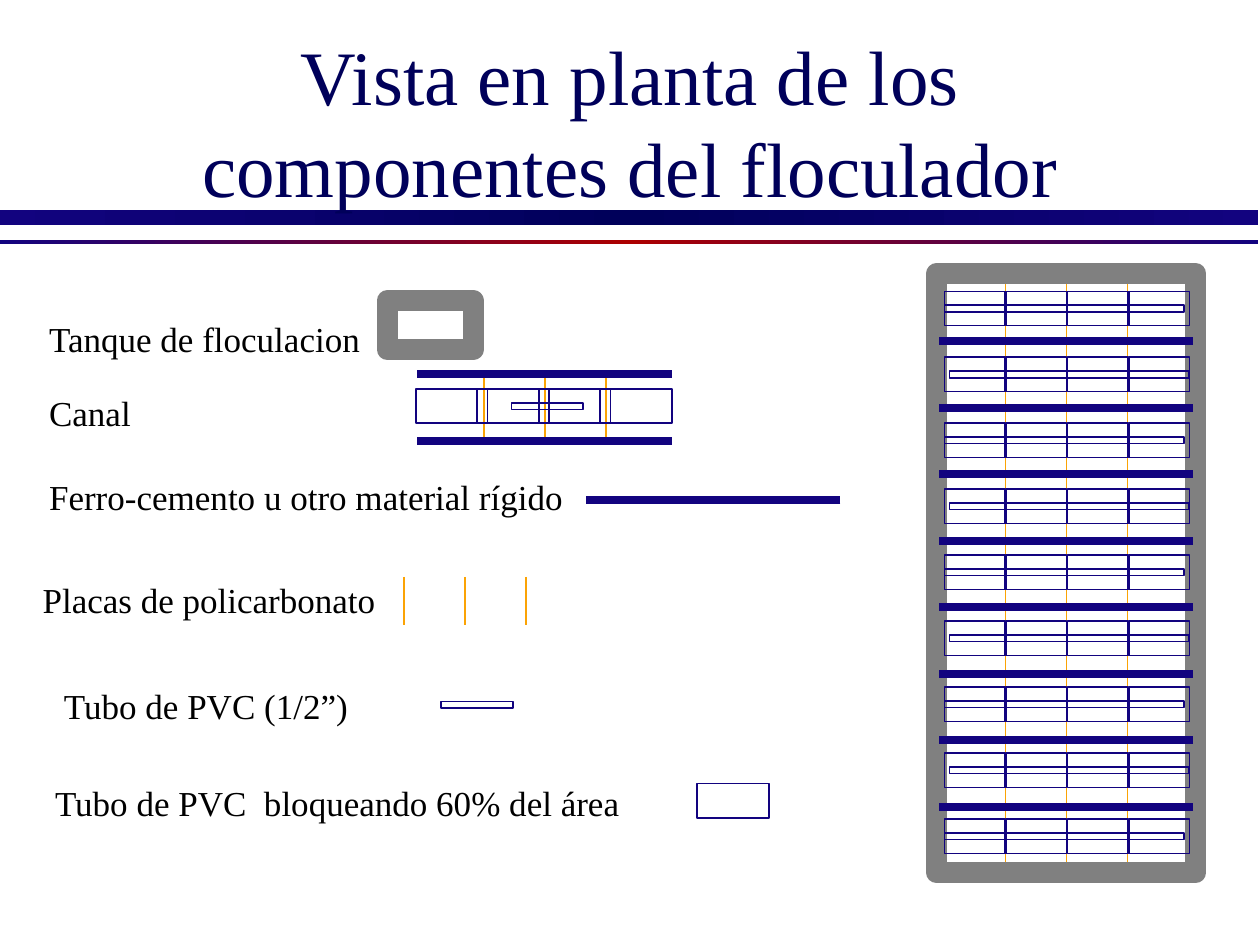
from copy import deepcopy

from pptx import Presentation
from pptx.dml.color import RGBColor
from pptx.enum.shapes import MSO_CONNECTOR, MSO_SHAPE
from pptx.enum.text import MSO_ANCHOR, PP_ALIGN
from pptx.oxml.ns import qn
from pptx.oxml.xmlchemy import OxmlElement
from pptx.util import Cm, Pt

FONT = "Times New Roman"
NAVY, DARK, RED = "12037F", "00005A", "AC0000"
ORANGE, GRAY, BLACK = "FBA305", "808080", "000000"

WALL_LENGTH = 5.13
PLATE_STEP = 1.23
BLOCK_STEP = 1.24
BLOCK_HEIGHT, TUBE_HEIGHT = 0.69, 0.13
SHORT_PIPE = 1.45

# text, left, top, width, wraps
LABELS = [
    ("Tanque de floculacion", 0.74, 6.27, 6.83, False),
    ("Canal", 0.74, 7.77, 2.18, False),
    ("Ferro-cemento u otro material rígido", 0.74, 9.47, 11.58, True),
    ("Placas de policarbonato", 0.61, 11.53, 10.82, True),
    ("Tubo de PVC (1/2”)", 1.04, 13.67, 6.27, False),
    ("Tubo de PVC  bloqueando 60% del área", 0.86, 15.62, 11.99, False),
]


def rgb(color):
    return RGBColor.from_string(color)


def add_text(shapes, text, x, y, w, h, size, color, wrap=True):
    tf = shapes.add_textbox(Cm(x), Cm(y), Cm(w), Cm(h)).text_frame
    tf.word_wrap = wrap
    p = tf.paragraphs[0]
    p.text = text
    p.font.name, p.font.size = FONT, Pt(size)
    p.font.color.rgb = rgb(color)
    return tf


def add_band(shapes, y, h, middle):
    """Full-width bar fading from navy to the middle colour and back."""
    sp = shapes.add_shape(MSO_SHAPE.RECTANGLE, 0, Cm(y), Cm(25.37), Cm(h))
    sp.shadow.inherit = False
    sp.line.fill.background()
    sp.fill.gradient()
    sp.fill.gradient_angle = 0
    for stop, color, position in zip(sp.fill.gradient_stops, (NAVY, middle), (0, 0.5)):
        stop.color.rgb = rgb(color)
        stop.position = position
    stops = sp._element.spPr.find(".//" + qn("a:gsLst"))
    last = deepcopy(stops[0])
    last.set("pos", "100000")
    stops.append(last)


def add_outline(shapes, x, y, w, h, color=NAVY, weight=1):
    sp = shapes.add_shape(MSO_SHAPE.RECTANGLE, Cm(x), Cm(y), Cm(w), Cm(h))
    sp.shadow.inherit = False
    sp.fill.background()
    sp.line.color.rgb = rgb(color)
    sp.line.width = Pt(weight)
    sp.line._get_or_add_ln().append(OxmlElement("a:round"))


def add_line(shapes, x1, y1, x2, y2, color, weight):
    line = shapes.add_connector(MSO_CONNECTOR.STRAIGHT, Cm(x1), Cm(y1), Cm(x2), Cm(y2))
    line.line.color.rgb = rgb(color)
    line.line.width = Pt(weight)
    line._element.spPr.append(OxmlElement("a:effectLst"))


def add_tank(shapes, x, y, w, h):
    add_outline(shapes, x, y, w, h, GRAY, 12)


def add_wall(shapes, x, y):
    add_line(shapes, x + WALL_LENGTH, y, x, y, NAVY, 4.5)


def add_plates(shapes, x, top, bottom):
    for i in range(3):
        px = x + i * PLATE_STEP
        add_line(shapes, px, top, px, bottom, ORANGE, 1)


def add_tube(shapes, x, center, w):
    add_outline(shapes, x, center - TUBE_HEIGHT / 2, w, TUBE_HEIGHT)


def add_blocks(shapes, x, center, w, count=4):
    for i in range(count):
        add_outline(shapes, x + i * BLOCK_STEP, center - BLOCK_HEIGHT / 2, w, BLOCK_HEIGHT)


def add_flocculator(shapes):
    add_plates(shapes, 20.27, 5.59, 17.48)
    add_tank(shapes, 18.88, 5.52, 5.23, 12.07)
    for i in range(8):
        add_wall(shapes, 18.92, 6.88 + i * 1.34)
    for row in range(9):
        center = 6.22 + row * 1.33
        add_tube(shapes, 19.14 if row % 2 else 19.04, center, 4.83)
        add_blocks(shapes, 19.04, center, 1.22)


def add_channel(shapes):
    add_plates(shapes, 9.75, 7.52, 8.81)
    for y in (7.54, 8.89):
        add_wall(shapes, 8.41, y)
    add_tube(shapes, 10.31, 8.19, SHORT_PIPE)
    add_blocks(shapes, 8.38, 8.19, SHORT_PIPE)


def add_legend(shapes):
    for text, x, y, w, wrap in LABELS:
        add_text(shapes, text, x, y, w, 1.12, 20, BLACK, wrap)
    add_tank(shapes, 7.81, 6.06, 1.73, 0.99)
    add_channel(shapes.add_group_shape().shapes)
    add_wall(shapes, 11.81, 10.08)
    add_plates(shapes.add_group_shape().shapes, 8.15, 11.63, 12.6)
    add_tube(shapes, 8.89, 14.21, SHORT_PIPE)
    add_blocks(shapes, 14.05, 16.14, SHORT_PIPE, count=1)


def main():
    prs = Presentation()
    prs.slide_width, prs.slide_height = Cm(25.4), Cm(19.05)
    shapes = prs.slides.add_slide(prs.slide_layouts[6]).shapes
    add_band(shapes, 4.24, 0.3, DARK)
    add_band(shapes, 4.83, 0.1, RED)
    tf = add_text(shapes, "Vista en planta de los componentes del floculador",
                  1.91, 0.84, 21.59, 3.18, 44, DARK)
    tf.vertical_anchor = MSO_ANCHOR.MIDDLE
    tf.paragraphs[0].alignment = PP_ALIGN.CENTER
    add_flocculator(shapes.add_group_shape().shapes)
    add_legend(shapes)
    prs.save("out.pptx")


if __name__ == "__main__":
    main()
